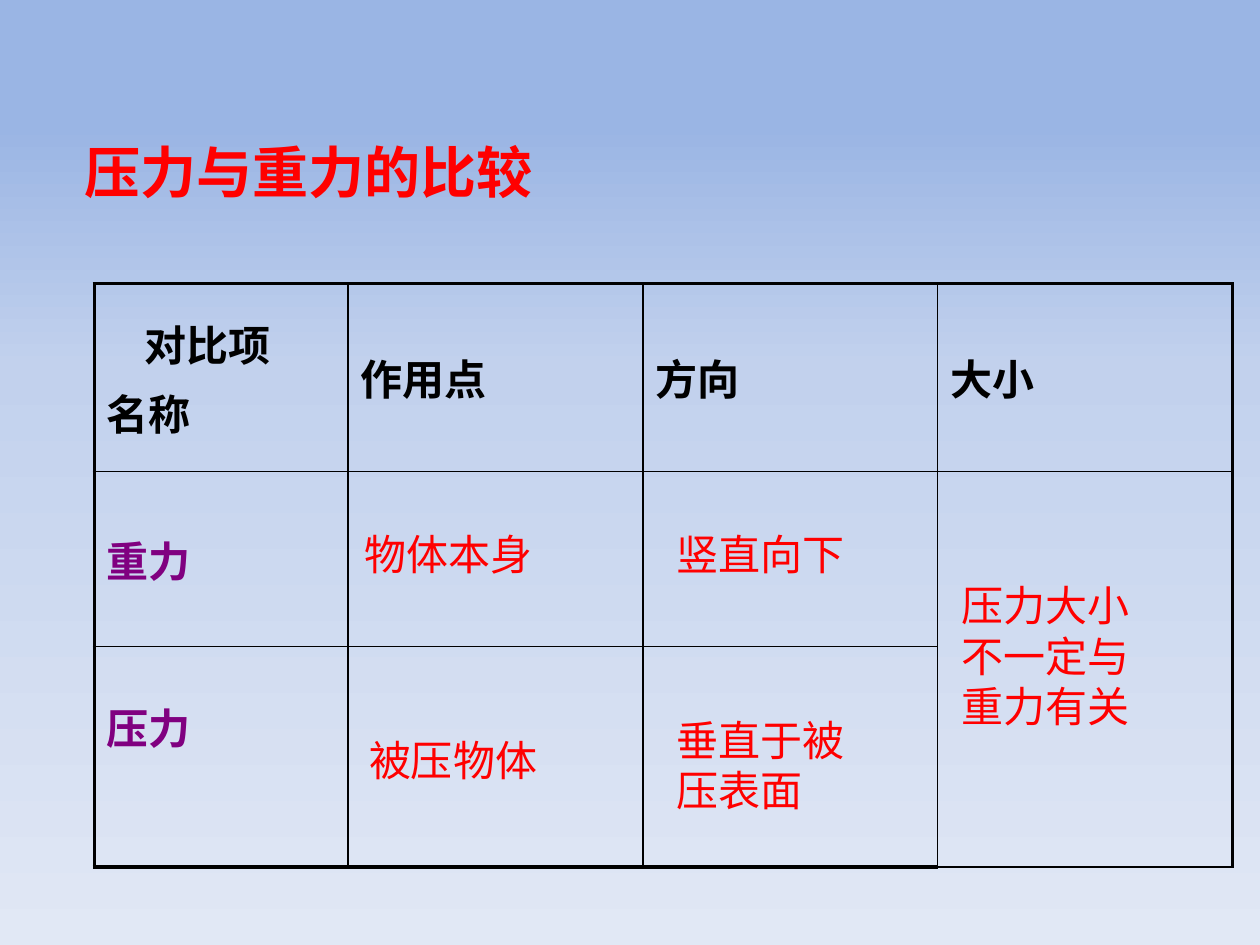
"""Build a slide comparing pressure force and gravity in a table."""
from copy import deepcopy
from dataclasses import dataclass

from lxml import etree
from pptx import Presentation
from pptx.dml.color import RGBColor
from pptx.enum.text import MSO_ANCHOR, PP_ALIGN
from pptx.oxml.ns import qn
from pptx.util import Cm, Pt

MIDDLE = MSO_ANCHOR.MIDDLE
TOP = MSO_ANCHOR.TOP
LEFT = PP_ALIGN.LEFT


@dataclass(frozen=True)
class Theme:
    font: str = "Arial"
    ink: str = "000000"
    answer: str = "FF0000"
    force: str = "800080"
    title_size: int = 32
    body_size: int = 24
    outer_line: float = 2.25
    inner_line: float = 1
    sky: tuple = ((0.13, "9AB5E4"), (0.39, "C2D1ED"), (1, "E1E8F5"))


THEME = Theme()


def add_text(paragraph, text, color, size=THEME.body_size, bold=False):
    paragraph.alignment = LEFT
    run = paragraph.add_run()
    run.text = text
    run.font.name = THEME.font
    run.font.size = Pt(size)
    run.font.bold = bold
    run.font.color.rgb = RGBColor.from_string(color)


def add_border(cell, side, width):
    line = etree.SubElement(cell._tc.get_or_add_tcPr(), qn(f"a:ln{side}"), w=str(Pt(width)))
    fill = etree.SubElement(line, qn("a:solidFill"))
    etree.SubElement(fill, qn("a:srgbClr"), val=THEME.ink)


prs = Presentation()
prs.slide_width, prs.slide_height = Cm(25.4), Cm(19.05)
slide = prs.slides.add_slide(prs.slide_layouts[5])

sky = slide.background.fill
sky.gradient()
sky.gradient_angle = 270
stops = sky.gradient_stops[0]._gs.getparent()
stops.append(deepcopy(stops[-1]))
for stop, (position, color) in zip(sky.gradient_stops, THEME.sky):
    stop.position = position
    stop.color.rgb = RGBColor.from_string(color)

title = slide.shapes.title
title.left, title.top, title.width, title.height = Cm(1.45), Cm(2.64), Cm(11.3), Cm(1.63)
title.text_frame.vertical_anchor = MIDDLE
add_text(title.text_frame.paragraphs[0], "压力与重力的比较", THEME.answer, THEME.title_size, True)

column_widths = (5.12, 5.94, 5.94, 5.94)
row_heights = (3.78, 3.53, 4.45)
labels = {
    (0, 0): ("对比项", "名称"),
    (0, 1): ("作用点",),
    (0, 2): ("方向",),
    (0, 3): ("大小",),
    (1, 0): ("重力",),
    (2, 0): ("压力",),
}
comparison = slide.shapes.add_table(
    len(row_heights), len(column_widths), Cm(1.9), Cm(5.72),
    Cm(sum(column_widths)), Cm(sum(row_heights))).table
comparison.first_row = comparison.horz_banding = False
for column, width in zip(comparison.columns, column_widths):
    column.width = Cm(width)
for row, height in zip(comparison.rows, row_heights):
    row.height = Cm(height)

last_row, last_column = len(row_heights) - 1, len(column_widths) - 1
for r in range(len(row_heights)):
    for c in range(len(column_widths)):
        cell = comparison.cell(r, c)
        cell.vertical_anchor = MIDDLE
        outer_sides = {"L": c == 0, "R": c == last_column, "T": r == 0, "B": r == last_row}
        for side, outer in outer_sides.items():
            add_border(cell, side, THEME.outer_line if outer else THEME.inner_line)
        cell.fill.background()
        for i, label in enumerate(labels.get((r, c), ())):
            paragraph = cell.text_frame.paragraphs[0] if i == 0 else cell.text_frame.add_paragraph()
            if i:
                paragraph.space_before = Pt(0.2 * THEME.body_size)
            add_text(paragraph, label, THEME.ink if r == 0 else THEME.force, bold=True)

corner = comparison.cell(0, 0).text_frame.paragraphs[0]
corner._p.get_or_add_pPr().set("marL", str(Cm(0.76)))
comparison.cell(last_row, 0).margin_bottom = Cm(1.37)
comparison.cell(1, last_column).merge(comparison.cell(last_row, last_column))

answers = (
    ("物体本身", 7.09, 10.52, 4.42, 1.3),
    ("被压物体", 7.19, 14.68, 4.11, 1.3),
    ("竖直向下", 13.39, 10.52, 4.06, 1.3),
    ("垂直于被压表面", 13.39, 14.27, 4.47, 3.33),
    ("压力大小不一定与重力有关", 19.13, 11.56, 4.67, 3.33),
)
for text, left, top, width, height in answers:
    answer = slide.shapes.add_textbox(Cm(left), Cm(top), Cm(width), Cm(height)).text_frame
    answer.word_wrap = True
    answer.vertical_anchor = TOP
    add_text(answer.paragraphs[0], text, THEME.answer)

prs.save("out.pptx")
